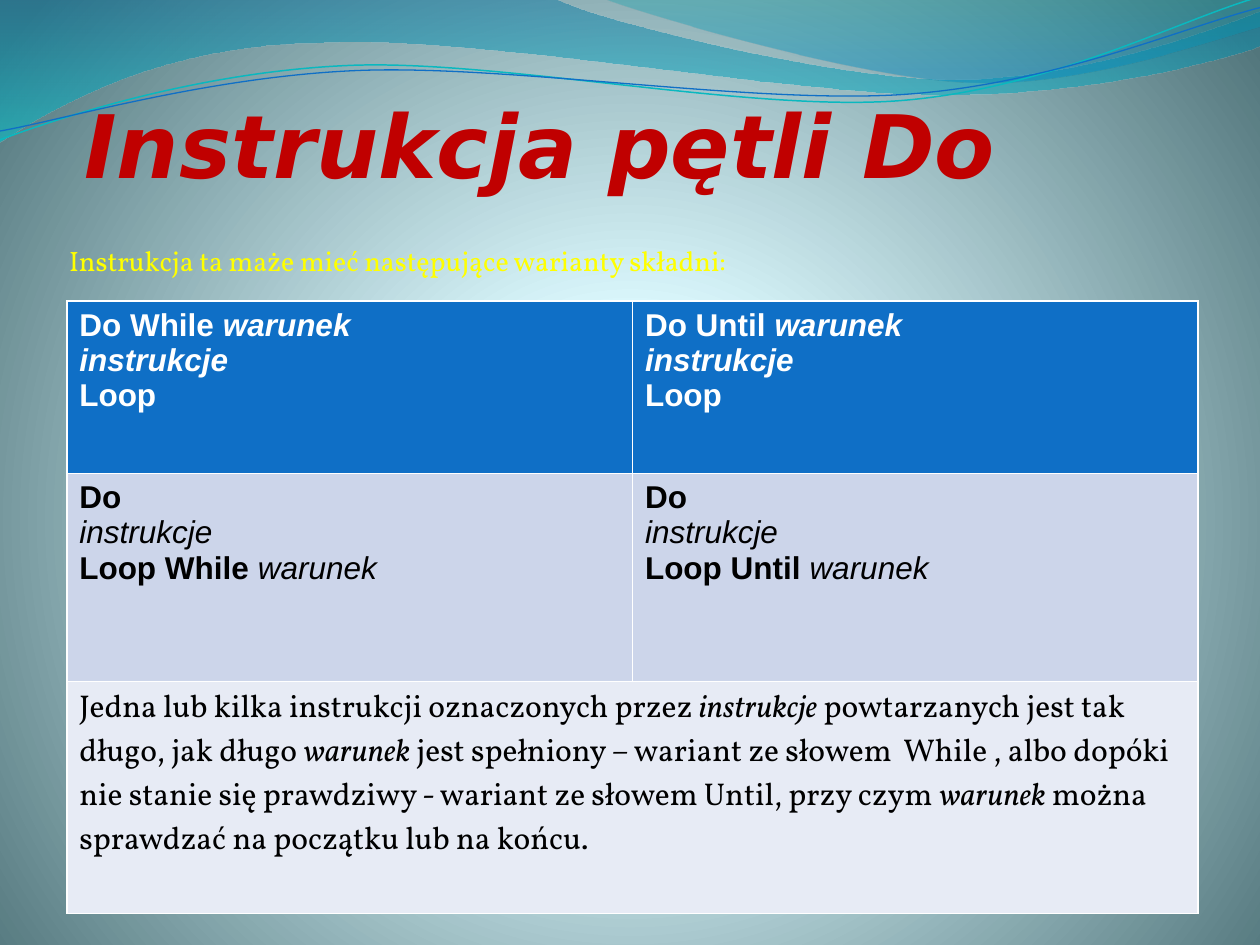
from dataclasses import dataclass
from math import cos, radians, sin
from typing import NamedTuple

from lxml.etree import SubElement
from pptx import Presentation
from pptx.dml.color import RGBColor
from pptx.enum.text import MSO_ANCHOR, PP_ALIGN
from pptx.oxml.ns import qn
from pptx.util import Emu, Inches, Pt

COLORS = {
    "title": "C00000", "lead": "FFFF00", "white": "FFFFFF", "black": "000000",
    "header": "0F6FC6", "band": "CCD5EA", "note": "E7EBF5",
    "teal_line": "0AB8BF", "blue_line": "0F6FC6",
}
WIDTH, HEIGHT = Inches(10), Inches(7.5)
COLUMN, ROW = WIDTH / 100, HEIGHT / 75


class Stop(NamedTuple):
    position: int
    color: str
    opacity: int = 100


class Span(NamedTuple):
    text: str
    bold: bool = False
    italic: bool = False


class Frame(NamedTuple):
    left: float
    top: float
    width: float
    height: float

    def emu(self) -> list[Emu]:
        return [Emu(round(n * unit)) for n, unit in zip(self, (COLUMN, ROW) * 2)]


@dataclass
class Wave:
    frame: Frame
    start: tuple
    segments: list
    stops: tuple = ()
    line: str = ""
    weight: float = 0
    tilt: float = 0


@dataclass
class Style:
    font: str
    size: float
    color: str


def rgb(key: str) -> RGBColor:
    return RGBColor.from_string(COLORS[key])


def add_gradient(parent, stops: tuple):
    gradient = SubElement(parent, qn("a:gradFill"), rotWithShape="1")
    stop_list = SubElement(gradient, qn("a:gsLst"))
    for stop in stops:
        mark = SubElement(stop_list, qn("a:gs"), pos=str(stop.position * 1000))
        color = SubElement(mark, qn("a:srgbClr"), val=stop.color)
        if stop.opacity < 100:
            SubElement(color, qn("a:alpha"), val=str(stop.opacity * 1000))
    return gradient


def paint_background(slide) -> None:
    slide.background.fill.solid()
    properties = slide._element.cSld.bg.bgPr
    properties.remove(properties[0])
    gradient = add_gradient(
        properties, (Stop(0, "DEFBFF"), Stop(25, "DDFAFF"), Stop(100, "52767C")))
    properties.insert(0, gradient)
    focus = SubElement(gradient, qn("a:path"), path="circle")
    SubElement(focus, qn("a:fillToRect"), l="10000", t="110000", r="10000", b="100000")


def trace(outline, wave: Wave) -> None:
    left, top, width, height = wave.frame
    turn = radians(-wave.tilt)

    def add_points(tag: str, numbers: tuple) -> None:
        command = SubElement(outline, qn(tag))
        for x, y in zip(numbers[::2], numbers[1::2]):
            dx, dy = x - left - width / 2, y - top - height / 2
            local_x = dx * cos(turn) - dy * sin(turn) + width / 2
            local_y = dx * sin(turn) + dy * cos(turn) + height / 2
            SubElement(command, qn("a:pt"), x=str(round(local_x * COLUMN)),
                       y=str(round(local_y * ROW)))

    for command in list(outline):
        outline.remove(command)
    add_points("a:moveTo", wave.start)
    for segment in wave.segments:
        add_points("a:lnTo" if len(segment) == 2 else "a:cubicBezTo", segment)
    if wave.stops:
        SubElement(outline, qn("a:close"))


def draw_wave(slide, wave: Wave) -> None:
    left, top, width, height = wave.frame.emu()
    builder = slide.shapes.build_freeform(left, top)
    builder.add_line_segments([(left + width, top + height)], close=False)
    shape = builder.convert_to_shape()
    shape.rotation = wave.tilt
    properties = shape._element.spPr
    trace(next(properties.iter(qn("a:path"))), wave)
    shape.shadow.inherit = False
    shape.fill.background()
    if wave.stops:
        shape.line.fill.background()
        blank = properties.find(qn("a:noFill"))
        gradient = add_gradient(properties, wave.stops)
        SubElement(gradient, qn("a:lin"), ang="5400000", scaled="1")
        properties.replace(blank, gradient)
    else:
        shape.line.color.rgb = rgb(wave.line)
        shape.line.width = Pt(wave.weight)


def write(text_frame, lines: list[list[Span]], style: Style) -> None:
    text_frame.word_wrap = True
    for index, line in enumerate(lines):
        paragraph = text_frame.add_paragraph() if index else text_frame.paragraphs[0]
        paragraph.alignment = PP_ALIGN.LEFT
        for span in line:
            run = paragraph.add_run()
            run.text = span.text
            run.font.name, run.font.size = style.font, Pt(style.size)
            run.font.bold, run.font.italic = span.bold, span.italic
            run.font.color.rgb = rgb(style.color)


def place(shape, frame: Frame) -> None:
    shape.left, shape.top, shape.width, shape.height = frame.emu()


def add_syntax_table(slide, frame: Frame, row_heights: tuple) -> None:
    table = slide.shapes.add_table(3, 2, *frame.emu()).table
    for row, height in zip(table.rows, row_heights):
        row.height = Emu(round(height * ROW))
    for column, keyword in enumerate(("While", "Until")):
        head = [[Span(f"Do {keyword} ", True), Span("warunek", True, True)],
                [Span("instrukcje", True, True)], [Span("Loop", True)]]
        tail = [[Span("Do", True)], [Span("instrukcje", italic=True)],
                [Span(f"Loop {keyword} ", True), Span("warunek", italic=True)]]
        write(table.cell(0, column).text_frame, head, Style("Arial", 18, "white"))
        write(table.cell(1, column).text_frame, tail, Style("Arial", 18, "black"))
        for row, fill in enumerate(("header", "band", "note")):
            cell = table.cell(row, column)
            cell.fill.solid()
            cell.fill.fore_color.rgb = rgb(fill)
    explanation = table.cell(2, 0)
    explanation.merge(table.cell(2, 1))
    write(explanation.text_frame, [[
        Span("Jedna lub kilka instrukcji oznaczonych przez "),
        Span("instrukcje", italic=True),
        Span(" powtarzanych jest tak długo, jak długo "),
        Span("warunek", italic=True),
        Span(" jest spełniony – wariant ze słowem  While , albo dopóki nie stanie się "
             "prawdziwy - wariant ze słowem Until, przy czym "),
        Span("warunek", italic=True),
        Span(" można sprawdzać na początku lub na końcu."),
    ]], Style("Vollkorn", 18, "black"))


WAVES = [
    Wave(Frame(-0.1, -0.1, 100.2, 11.4), (0, -0.1),
         [(44, -0.1), (47.6, 1.7, 66.4, 6.3, 75.8, 6.3),
          (85.3, 6.3, 95.8, 2.6, 100, 0.9), (100.1, 3.6),
          (98.3, 4.4, 87, 7.6, 74.6, 7.5), (62.2, 7.5, 38.2, 2.8, 25.7, 3.4),
          (12.9, 3.5, 4.6, 8.3, -0.1, 11.3), (0, -0.1)],
         stops=(Stop(0, "0074A1", 45), Stop(100, "00C6CF", 55))),
    Wave(Frame(47.9, -0.1, 52.1, 7), (47.9, -0.1),
         [(50.9, 1.1, 68.2, 6.2, 76.9, 6.5), (85.6, 6.9, 96.1, 3.2, 100, 2.1),
          (100, 0), (47.9, -0.1)],
         stops=(Stop(0, "00A1A9", 30), Stop(80, "008BBF", 45))),
    Wave(Frame(-0.2, 2.2, 100.2, 7.1), (0, 11.1),
         [(4.8, 9.3, 15.8, 5.7, 27.7, 5.2), (39.5, 4.7, 59.3, 8.9, 71.3, 8),
          (83.3, 7.1, 93.8, 1.5, 99.8, -0.2)],
         line="teal_line", weight=0.85, tilt=-2.7),
    Wave(Frame(-0.2, 3, 100.3, 5.8), (0, 10.4),
         [(4.7, 9.6, 16.4, 6.1, 28.3, 5.6), (40.3, 5.1, 59.7, 8.3, 71.7, 7.5),
          (83.6, 6.7, 94.1, 2.1, 100, 0.6)],
         line="blue_line", weight=0.75, tilt=-2.7),
]


def main() -> None:
    deck = Presentation()
    deck.slide_width, deck.slide_height = WIDTH, HEIGHT
    slide = deck.slides.add_slide(deck.slide_layouts[5])
    paint_background(slide)
    for wave in WAVES:
        draw_wave(slide, wave)

    heading = slide.shapes.title
    slide.shapes._spTree.append(heading._element)
    place(heading, Frame(5.7, 3.6, 90, 12.5))
    heading.text_frame.vertical_anchor = MSO_ANCHOR.BOTTOM
    write(heading.text_frame, [[Span("Instrukcja pętli Do", True, True)]],
          Style("DejaVu Sans", 50, "title"))

    lead = slide.shapes.add_textbox(*Frame(4.5, 15.9, 93.3, 7.5).emu())
    lead.text_frame.margin_top, lead.text_frame.margin_bottom = Inches(0.42), 0
    write(lead.text_frame, [[Span("Instrukcja ta maże mieć następujące warianty składni:")]],
          Style("Vollkorn", 16, "lead"))

    add_syntax_table(slide, Frame(5.3, 23.9, 89.8, 48.6), (13.7, 16.5, 18.4))
    deck.save("out.pptx")


if __name__ == "__main__":
    main()
